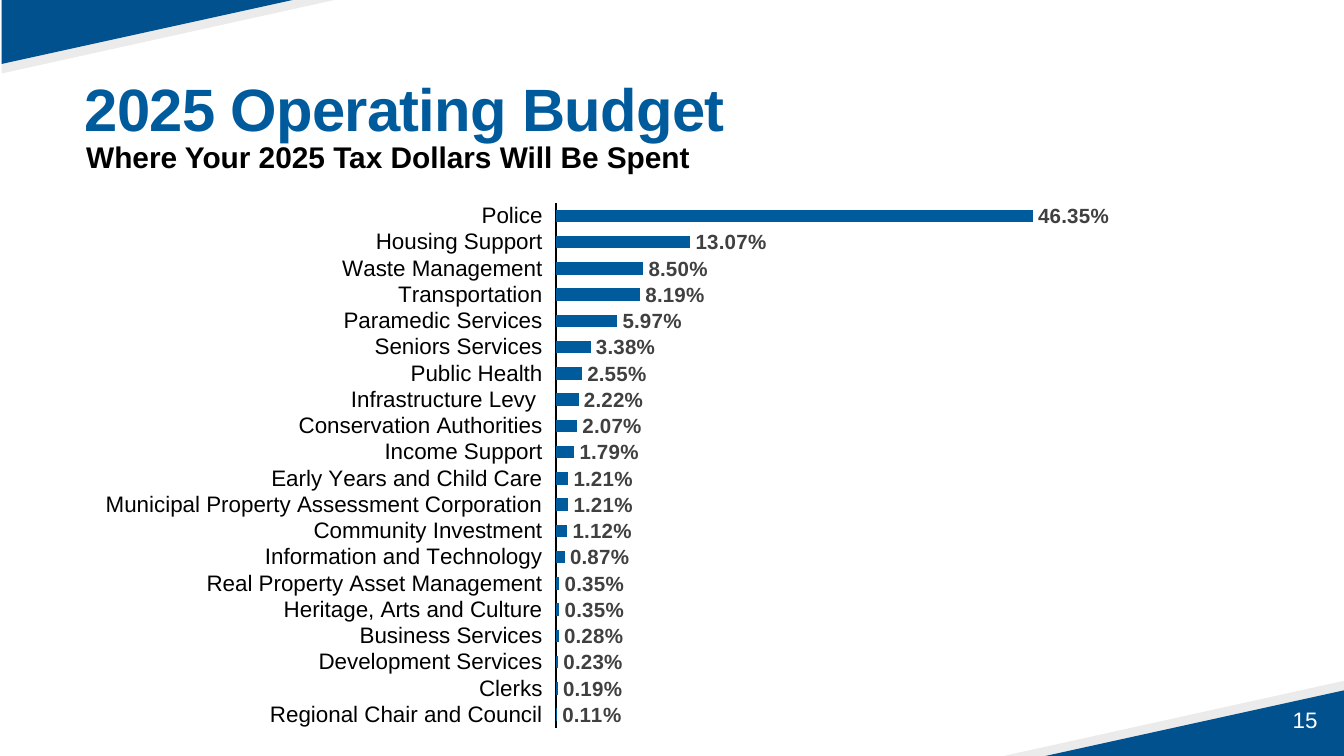
from pptx import Presentation
from pptx.chart.data import CategoryChartData
from pptx.dml.color import RGBColor
from pptx.enum.chart import XL_CHART_TYPE, XL_LABEL_POSITION, XL_TICK_LABEL_POSITION, XL_TICK_MARK
from pptx.enum.text import MSO_ANCHOR, PP_ALIGN
from pptx.oxml import parse_xml
from pptx.oxml.ns import nsdecls
from pptx.util import Cm, Pt

BLUE = RGBColor(0x00, 0x5B, 0x9C)
DARK_BLUE = RGBColor(0x00, 0x51, 0x8E)
PALE_GREY = RGBColor(0xEB, 0xEB, 0xEC)
LABEL_GREY = RGBColor(0x40, 0x40, 0x40)
BLACK = RGBColor(0x00, 0x00, 0x00)
WHITE = RGBColor(0xFF, 0xFF, 0xFF)
FONT = "Arial"

SLIDE_WIDTH, SLIDE_HEIGHT = 25.4, 14.29

# Share of each tax dollar in percent, largest first
SPENDING = [
    ("Police", 46.35),
    ("Housing Support", 13.07),
    ("Waste Management", 8.50),
    ("Transportation", 8.19),
    ("Paramedic Services", 5.97),
    ("Seniors Services", 3.38),
    ("Public Health", 2.55),
    ("Infrastructure Levy ", 2.22),
    ("Conservation Authorities", 2.07),
    ("Income Support", 1.79),
    ("Early Years and Child Care", 1.21),
    ("Municipal Property Assessment Corporation", 1.21),
    ("Community Investment", 1.12),
    ("Information and Technology", 0.87),
    ("Real Property Asset Management", 0.35),
    ("Heritage, Arts and Culture", 0.35),
    ("Business Services", 0.28),
    ("Development Services", 0.23),
    ("Clerks", 0.19),
    ("Regional Chair and Council", 0.11),
]


def set_font(font, size, color, bold=False):
    font.name = FONT
    font.size = Pt(size)
    font.bold = bold
    font.color.rgb = color


def add_text(slide, box, text, size, color, bold=False, insets=(0.25, 0.13, 0.25, 0.13)):
    """Add a one-paragraph text box; box and insets are in centimetres."""
    frame = slide.shapes.add_textbox(*map(Cm, box)).text_frame
    frame.word_wrap = True
    frame.margin_left, frame.margin_top, frame.margin_right, frame.margin_bottom = map(Cm, insets)
    paragraph = frame.paragraphs[0]
    paragraph.text = text
    set_font(paragraph.font, size, color, bold)
    return frame


def add_corner(slide, x, y, direction):
    """Stack two triangles at a corner; direction 1 opens right and down, -1 left and up."""
    for width, height, color in ((6.43, 1.42, PALE_GREY), (5.64, 1.24, DARK_BLUE)):
        builder = slide.shapes.build_freeform(Cm(x), Cm(y))
        builder.add_line_segments([
            (Cm(x + direction * width), Cm(y)),
            (Cm(x), Cm(y + direction * height)),
        ])
        triangle = builder.convert_to_shape()
        triangle.shadow.inherit = False
        triangle.fill.solid()
        triangle.fill.fore_color.rgb = color
        triangle.line.fill.background()


def add_heading(slide, left, top):
    """Place the title and the subtitle below it."""
    title = add_text(slide, (left, top, 21.89, 1.73), "2025 Operating Budget",
                     32, BLUE, True, (0.25, 0.2, 0.25, 0.13))
    paragraph = title.paragraphs[0]
    paragraph.line_spacing = 0.9
    paragraph.runs[0]._r.get_or_add_rPr().set("spc", "-40")
    add_text(slide, (left + 0.28, top + 0.74, 14.86, 1.55),
             "Where Your 2025 Tax Dollars Will Be Spent", 16, BLACK, True, (0, 0.64, 0.25, 0.2))


def set_plot_layout(chart, x, y, width, height):
    """Fix the inner plot area as fractions of the chart."""
    plot_area = chart._chartSpace.chart.plotArea
    for layout in plot_area.findall("{*}layout"):
        plot_area.remove(layout)
    plot_area.insert(0, parse_xml(
        f'<c:layout {nsdecls("c")}><c:manualLayout><c:layoutTarget val="inner"/>'
        '<c:xMode val="edge"/><c:yMode val="edge"/>'
        f'<c:x val="{x}"/><c:y val="{y}"/><c:w val="{width}"/><c:h val="{height}"/>'
        '</c:manualLayout></c:layout>'))


def add_spending_chart(slide, box):
    data = CategoryChartData(number_format="0.00%")
    smallest_first = SPENDING[::-1]
    data.categories = [name for name, percent in smallest_first]
    data.add_series("Series 1", [round(percent / 100, 4) for name, percent in smallest_first])
    chart = slide.shapes.add_chart(XL_CHART_TYPE.BAR_CLUSTERED, *map(Cm, box), data).chart
    chart.has_legend = False
    chart.has_title = False
    set_font(chart.font, 10, BLACK)
    set_plot_layout(chart, 0.608, 0.043, 0.347, 0.939)

    # Axes
    category_axis = chart.category_axis
    category_axis.major_tick_mark = category_axis.minor_tick_mark = XL_TICK_MARK.NONE
    category_axis.tick_label_position = XL_TICK_LABEL_POSITION.LOW
    category_axis.format.line.color.rgb = BLACK
    category_axis.format.line.width = Pt(0.75)
    set_font(category_axis.tick_labels.font, 12, BLACK)
    value_axis = chart.value_axis
    value_axis.minimum_scale, value_axis.maximum_scale = 0, 0.5
    value_axis.has_major_gridlines = False
    value_axis.visible = False

    # Bars and their labels
    plot = chart.plots[0]
    plot.gap_width = 108
    plot.vary_by_categories = False
    series = plot.series[0]
    series.format.fill.solid()
    series.format.fill.fore_color.rgb = BLUE
    labels = series.data_labels
    labels.show_value = True
    labels.position = XL_LABEL_POSITION.OUTSIDE_END
    labels.number_format = "0.00%"
    labels.number_format_is_linked = False
    set_font(labels.font, 11, LABEL_GREY, True)


def add_page_number(slide, box, number):
    frame = add_text(slide, box, number, 12, WHITE)
    frame.vertical_anchor = MSO_ANCHOR.MIDDLE
    frame.paragraphs[0].alignment = PP_ALIGN.RIGHT


def main():
    presentation = Presentation()
    presentation.slide_width, presentation.slide_height = Cm(SLIDE_WIDTH), Cm(SLIDE_HEIGHT)
    slide = presentation.slides.add_slide(presentation.slide_layouts[6])
    add_corner(slide, 0.03, -0.03, 1)
    add_corner(slide, SLIDE_WIDTH, SLIDE_HEIGHT, -1)
    add_page_number(slide, (19.23, 13.23, 5.92, 0.76), "15")
    add_heading(slide, 1.35, 1.32)
    add_spending_chart(slide, (-6.53, 3.38, 28.02, 10.57))
    presentation.save("out.pptx")


if __name__ == "__main__":
    main()
